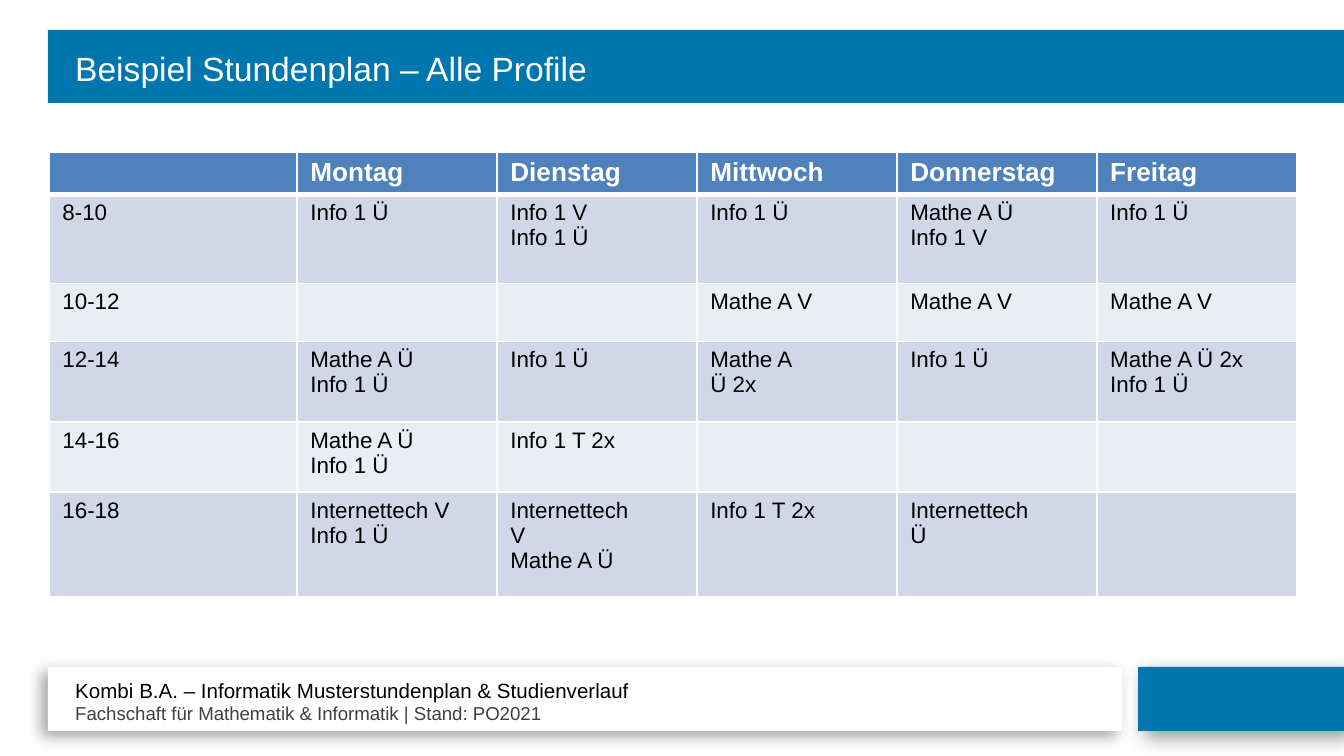
from dataclasses import dataclass

from lxml import etree
from pptx import Presentation
from pptx.dml.color import RGBColor
from pptx.enum.shapes import MSO_SHAPE
from pptx.enum.text import MSO_ANCHOR
from pptx.oxml.ns import qn
from pptx.util import Emu, Pt

RECT = MSO_SHAPE.RECTANGLE
TOP, MIDDLE = MSO_ANCHOR.TOP, MSO_ANCHOR.MIDDLE

# Content
TITLE = "Beispiel Stundenplan – Alle Profile"
DAYS = ["", "Montag", "Dienstag", "Mittwoch", "Donnerstag", "Freitag"]
SLOTS = [
    ["8-10", "Info 1 Ü", "Info 1 V\nInfo 1 Ü", "Info 1 Ü", "Mathe A Ü\nInfo 1 V", "Info 1 Ü"],
    ["10-12", "", "", "Mathe A V", "Mathe A V", "Mathe A V"],
    ["12-14", "Mathe A Ü\nInfo 1 Ü", "Info 1 Ü", "Mathe A\nÜ 2x", "Info 1 Ü",
     "Mathe A Ü 2x\nInfo 1 Ü"],
    ["14-16", "Mathe A Ü\nInfo 1 Ü", "Info 1 T 2x", "", "", ""],
    ["16-18", "Internettech V\nInfo 1 Ü", "Internettech\nV\nMathe A Ü", "Info 1 T 2x",
     "Internettech\nÜ", ""],
]
FOOTER = ["Kombi B.A. – Informatik Musterstundenplan & Studienverlauf",
          "Fachschaft für Mathematik & Informatik | Stand: PO2021"]


@dataclass(frozen=True)
class Theme:
    font: str = "Arial"
    blue: str = "0076AF"
    head: str = "4F81BD"
    bands: tuple = ("D0D8E8", "E9EDF4")
    white: str = "FFFFFF"
    black: str = "000000"
    gray: str = "404040"
    title_size: int = 18
    head_size: int = 14
    cell_size: int = 12
    foot_sizes: tuple = (11, 10)
    thin: int = 1
    thick: int = 3


THEME = Theme()

# Layout in px
WIDTH, HEIGHT = 1344, 756
EDGE = 48
BAR = (EDGE, 30, WIDTH - EDGE, 73)
TITLE_BOX = (62, 32, 1130, 73)
FOOT = (EDGE, 667, 1074, 64)
FOOT_BOX = (62, 671, 804, 63)
BLOCK = (1138, 667, WIDTH - 1138, 64)
GRID_LEFT, GRID_TOP = 49, 152
COLS = [248] + [200] * 5
ROWS = [42, 89, 58, 81, 70, 105]
PAD = 6


def px(num):
    return Emu(round(num * 914400 / 134.4))


def rgb(code):
    return RGBColor.from_string(code)


def style(par, size, color, bold=False):
    for run in par.runs:
        font = run.font
        font.name, font.size, font.bold = THEME.font, Pt(size), bold
        font.color.rgb = rgb(color)


def add_rect(slide, box, color, shadow=None):
    shape = slide.shapes.add_shape(RECT, *map(px, box))
    shape.shadow.inherit = False
    shape.fill.solid()
    shape.fill.fore_color.rgb = rgb(color)
    shape.line.fill.background()
    if shadow:
        alpha, blur, dist, angle = shadow
        effects = shape._element.spPr.find(qn("a:effectLst"))
        outer = etree.SubElement(effects, qn("a:outerShdw"), blurRad=str(Pt(blur)),
                                 dist=str(Pt(dist)), dir=str(angle * 60000), rotWithShape="0")
        tint = etree.SubElement(outer, qn("a:srgbClr"), val=THEME.black)
        etree.SubElement(tint, qn("a:alpha"), val=str(alpha * 1000))


def add_text(slide, box, lines, sizes, colors, anchor):
    frame = slide.shapes.add_textbox(*map(px, box)).text_frame
    frame.word_wrap = True
    frame.vertical_anchor = anchor
    frame.text = "\n".join(lines)
    for par, size, color in zip(frame.paragraphs, sizes, colors):
        style(par, size, color)


def add_border(cell, side, width):
    line = etree.SubElement(cell._tc.get_or_add_tcPr(), qn(f"a:ln{side}"), w=str(Pt(width)))
    fill = etree.SubElement(line, qn("a:solidFill"))
    etree.SubElement(fill, qn("a:srgbClr"), val=THEME.white)


def fill_cell(cell, text, row):
    head = row == 0
    size = THEME.head_size if head else THEME.cell_size
    cell.margin_top, cell.margin_bottom = px(PAD), px(PAD - 1)
    # The header rule is shared by the header and the first slot
    heavy = {0: "B", 1: "T"}.get(row)
    for side in "LRTB":
        add_border(cell, side, THEME.thick if side == heavy else THEME.thin)
    cell.fill.solid()
    cell.fill.fore_color.rgb = rgb(THEME.head if head else THEME.bands[(row - 1) % 2])
    cell.text_frame.text = text
    for par in cell.text_frame.paragraphs:
        style(par, size, THEME.white if head else THEME.black, head)
        if not text:
            # Keep empty cells from stretching their row
            par._p.get_or_add_endParaRPr().set("sz", str(size * 100))


def add_plan(slide):
    data = [DAYS] + SLOTS
    box = (GRID_LEFT, GRID_TOP, sum(COLS), sum(ROWS))
    table = slide.shapes.add_table(len(ROWS), len(COLS), *map(px, box)).table
    for col, width in zip(table.columns, COLS):
        col.width = px(width)
    for row, height in zip(table.rows, ROWS):
        row.height = px(height)
    for row, texts in enumerate(data):
        for col, text in enumerate(texts):
            fill_cell(table.cell(row, col), text, row)


def main():
    deck = Presentation()
    deck.slide_width, deck.slide_height = px(WIDTH), px(HEIGHT)
    slide = deck.slides.add_slide(deck.slide_layouts[6])

    # Footer
    add_rect(slide, FOOT, THEME.white, (34, 7.5, 4, 145))
    add_rect(slide, BLOCK, THEME.blue, (42, 10.8, 5, 40))
    add_text(slide, FOOT_BOX, FOOTER, THEME.foot_sizes, (THEME.black, THEME.gray), TOP)

    # Title bar
    add_rect(slide, BAR, THEME.blue)
    add_text(slide, TITLE_BOX, [TITLE], [THEME.title_size], [THEME.white], MIDDLE)

    # Timetable
    add_plan(slide)
    deck.save("out.pptx")


if __name__ == "__main__":
    main()
